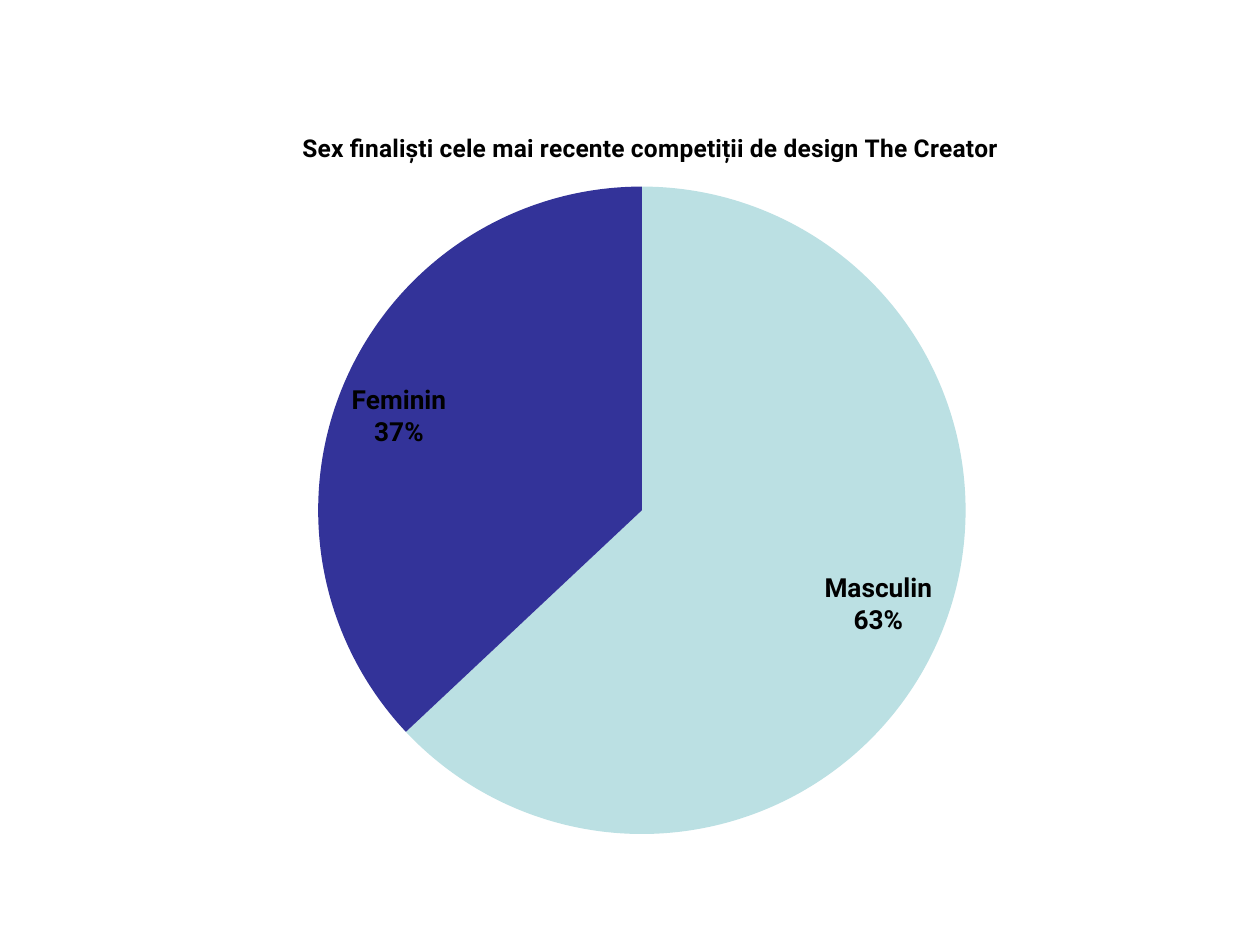
import pptx
import pptx.chart.data
import pptx.dml.color
import pptx.enum.chart
import pptx.enum.shapes
import pptx.oxml
import pptx.oxml.ns
import pptx.util

WIDTH, HEIGHT = 10, 7.5
SLICES = {"Masculin": (63, "BBE0E3"), "Feminin": (37, "333399")}
TITLE = "Sex finaliști cele mai recente competiții de design The Creator"


def color(value):
    """Turn a hex string into a colour."""
    return pptx.dml.color.RGBColor.from_string(value)


def format_font(font, size, bold=True):
    """Apply the slide's typeface to a font."""
    values = {"name": "Roboto", "size": pptx.util.Pt(size), "bold": bold}
    for name, value in values.items():
        setattr(font, name, value)
    font.color.rgb = color("000000")


def chart_element(tag):
    """Make an empty element of the chart namespace."""
    return pptx.oxml.parse_xml(f"<c:{tag} {pptx.oxml.ns.nsdecls('c')}/>")


def place(parent, index, **shares):
    """Place a chart part by shares of the chart's size."""
    for old in parent.findall(pptx.oxml.ns.qn("c:layout")):
        parent.remove(old)
    layout, manual = chart_element("layout"), chart_element("manualLayout")
    modes = {"xMode": "edge", "yMode": "edge"}
    if "w" in shares:
        modes = {"layoutTarget": "inner", **modes}
    for tag, value in {**modes, **shares}.items():
        child = chart_element(tag)
        child.set("val", str(value))
        manual.append(child)
    layout.append(manual)
    parent.insert(index, layout)


def add_backdrop(page):
    """Cover the page with a plain white rectangle."""
    backdrop = page.shapes.add_shape(
        pptx.enum.shapes.MSO_SHAPE.RECTANGLE, 0, 0,
        pptx.util.Inches(WIDTH), pptx.util.Inches(HEIGHT))
    backdrop.shadow.inherit = False
    backdrop.fill.solid()
    backdrop.fill.fore_color.rgb = color("FFFFFF")
    backdrop.line.color.rgb = color("FFFFFF")
    backdrop.line.width = pptx.util.Pt(0.75)


def add_pie(page, left, top, width, height):
    """Add the pie chart and return it."""
    data = pptx.chart.data.CategoryChartData()
    data.categories = list(SLICES)
    data.add_series("Series 1", [value for value, fill in SLICES.values()])
    frame = page.shapes.add_chart(
        pptx.enum.chart.XL_CHART_TYPE.PIE,
        *map(pptx.util.Inches, (left, top, width, height)), data)
    chart = frame.chart
    chart.has_legend = False
    format_font(chart.font, 10, False)
    chart.plots[0].vary_by_categories = True
    series = chart.plots[0].series[0]
    for index, (value, fill) in enumerate(SLICES.values()):
        point = series.points[index].format
        point.fill.solid()
        point.fill.fore_color.rgb = color(fill)
        point.line.fill.background()
    plot_area = chart.plots[0]._element.getparent()
    place(plot_area, 0, x=0.18, y=0.11, w=0.64, h=0.87)
    return chart


def add_title(chart):
    """Write the chart's title."""
    chart.has_title = True
    frame = chart.chart_title.text_frame
    frame.text = TITLE
    format_font(frame.paragraphs[0].runs[0].font, 14)
    chart.chart_title.include_in_layout = False
    place(chart.chart_title._element, 1, x=0.16, y=0.03)


def add_labels(chart):
    """Label each slice with its name above its percentage."""
    labels = chart.plots[0].series[0].data_labels
    values = {
        "show_value": False,
        "show_category_name": True,
        "show_percentage": True,
        "position": pptx.enum.chart.XL_LABEL_POSITION.INSIDE_END,
    }
    for name, value in values.items():
        setattr(labels, name, value)
    format_font(labels.font, 15)
    separator = chart_element("separator")
    separator.text = "\n"
    labels._element.find(pptx.oxml.ns.qn("c:showBubbleSize")).addnext(separator)


def main():
    """Build and save the slide."""
    deck = pptx.Presentation()
    deck.slide_width = pptx.util.Inches(WIDTH)
    deck.slide_height = pptx.util.Inches(HEIGHT)
    page = deck.slides.add_slide(deck.slide_layouts[6])
    add_backdrop(page)
    chart = add_pie(page, 1.08, 0.83, 8.03, 5.91)
    add_title(chart)
    add_labels(chart)
    deck.save("out.pptx")


if __name__ == "__main__":
    main()
